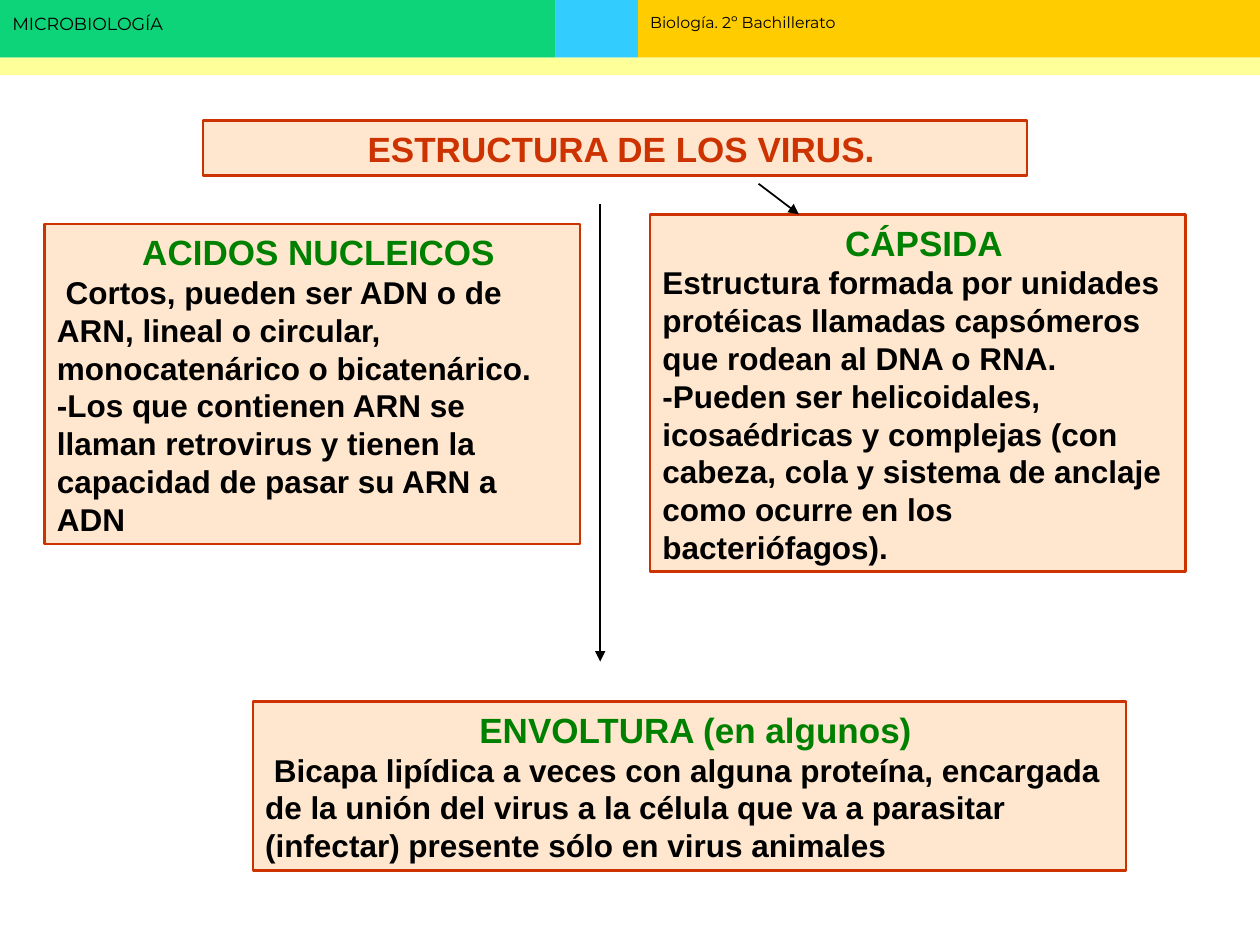
from lxml import etree
from pptx import Presentation
from pptx.dml.color import RGBColor
from pptx.enum.shapes import MSO_CONNECTOR, MSO_SHAPE
from pptx.enum.text import MSO_ANCHOR, PP_ALIGN
from pptx.oxml.ns import qn
from pptx.util import Pt

BLACK = RGBColor(0x00, 0x00, 0x00)
GREEN = RGBColor(0x00, 0x80, 0x00)
RED = RGBColor(0xCC, 0x33, 0x00)
PEACH = RGBColor(0xFF, 0xE7, 0xCF)
GOLD = RGBColor(0xFF, 0xCC, 0x00)
SKY = RGBColor(0x33, 0xCC, 0xFF)
EMERALD = RGBColor(0x0D, 0xD3, 0x79)
PALE_YELLOW = RGBColor(0xFF, 0xFF, 0x99)

SLIDE_WIDTH, SLIDE_HEIGHT = 720, 540
LINE_HEIGHT = 1.2


def add_rectangle(slide, box, fill, line=None):
    shape = slide.shapes.add_shape(MSO_SHAPE.RECTANGLE, *map(Pt, box))
    shape.shadow.inherit = False
    shape.fill.solid()
    shape.fill.fore_color.rgb = fill
    if line is None:
        shape.line.fill.background()
    else:
        shape.line.color.rgb = line
        shape.line.width = Pt(1.5)
    return shape


def prepare_frame(shape, top, left):
    frame = shape.text_frame
    frame.word_wrap = True
    frame.vertical_anchor = MSO_ANCHOR.TOP
    frame.margin_left, frame.margin_top = Pt(left), Pt(top)
    frame.margin_right = frame.margin_bottom = 0
    return frame


def write(paragraph, text, size, color, name="Arial", bold=True, align=PP_ALIGN.LEFT):
    paragraph.text = text
    paragraph.alignment = align
    font = paragraph.font
    font.name, font.size, font.bold = name, Pt(size), bold
    font.color.rgb = color


def add_header(slide, box):
    left, top, width, height = box
    band = 33
    split, right = 317.5, 364.5

    # Coloured bands
    add_rectangle(slide, (right, top, width - right, band), GOLD)
    add_rectangle(slide, (split, top, right - split, band), SKY)
    add_rectangle(slide, (left, top, split - left, band), EMERALD)
    add_rectangle(slide, (left, top + band, width, height - band), PALE_YELLOW)

    # Subject and course
    labels = (
        ("MICROBIOLOGÍA", 10, (left + 6, top + 6.5, 110, 16), 1),
        ("Biología. 2º Bachillerato", 9, (right, top, width - right, 26), 7.2),
    )
    for text, size, label_box, inset in labels:
        label = slide.shapes.add_textbox(*map(Pt, label_box))
        frame = prepare_frame(label, inset, 7 if label_box[0] == right else 1)
        write(frame.paragraphs[0], text, size, BLACK, "Montserrat", False)


def add_card(slide, box, heading, heading_color, body=(), indent=0):
    card = add_rectangle(slide, box, PEACH, RED)
    frame = prepare_frame(card, 4, 7)
    title = frame.paragraphs[0]
    write(title, heading, 20, heading_color, align=PP_ALIGN.CENTER)
    title.line_spacing = Pt(20 * LINE_HEIGHT)
    for index, text in enumerate(body):
        paragraph = frame.add_paragraph()
        if index == 0 and indent:
            paragraph._p.get_or_add_pPr().set("indent", str(Pt(indent)))
        write(paragraph, text, 18, BLACK)
        paragraph.line_spacing = Pt(18 * LINE_HEIGHT)


def add_arrow(slide, start, end):
    arrow = slide.shapes.add_connector(MSO_CONNECTOR.STRAIGHT, *map(Pt, start + end))
    arrow.line.color.rgb = BLACK
    arrow.line.width = Pt(1)
    line = arrow.line._get_or_add_ln()
    etree.SubElement(line, qn("a:tailEnd"), type="triangle")
    etree.SubElement(arrow._element.spPr, qn("a:effectLst"))


def build_virus_slide(slide, box):
    left, top, width, _ = box
    add_header(slide, (left, top, width, 43))

    # Main concept
    add_card(slide, (116, 69, 471, 31.5), "ESTRUCTURA DE LOS VIRUS.", RED)

    # Components
    add_card(slide, (25.5, 128, 306, 183), "ACIDOS NUCLEICOS", GREEN, (
        "Cortos, pueden ser ADN o de\vARN, lineal o circular,\v"
        "monocatenárico o bicatenárico.",
        "-Los que contienen ARN se\vllaman retrovirus y tienen la\v"
        "capacidad de pasar su ARN a\vADN",
    ), indent=5)
    add_card(slide, (371.5, 122.5, 306, 204), "CÁPSIDA", GREEN, (
        "Estructura formada por unidades\vprotéicas llamadas capsómeros\v"
        "que rodean al DNA o RNA.",
        "-Pueden ser helicoidales,\vicosaédricas y complejas (con\v"
        "cabeza, cola y sistema de anclaje\vcomo ocurre en los\vbacteriófagos).",
    ))
    add_card(slide, (144.5, 401, 499, 96.5), "ENVOLTURA (en algunos)", GREEN, (
        "Bicapa lipídica a veces con alguna proteína, encargada\v"
        "de la unión del virus a la célula que va a parasitar\v"
        "(infectar) presente sólo en virus animales",
    ), indent=5)

    # Arrows from the concept to its components
    add_arrow(slide, (343, 116.5), (343, 378))
    add_arrow(slide, (433.5, 105), (456.5, 122.5))


def main():
    presentation = Presentation()
    presentation.slide_width = Pt(SLIDE_WIDTH)
    presentation.slide_height = Pt(SLIDE_HEIGHT)
    slide = presentation.slides.add_slide(presentation.slide_layouts[6])
    build_virus_slide(slide, (0, 0, SLIDE_WIDTH, SLIDE_HEIGHT))
    presentation.save("out.pptx")


if __name__ == "__main__":
    main()
